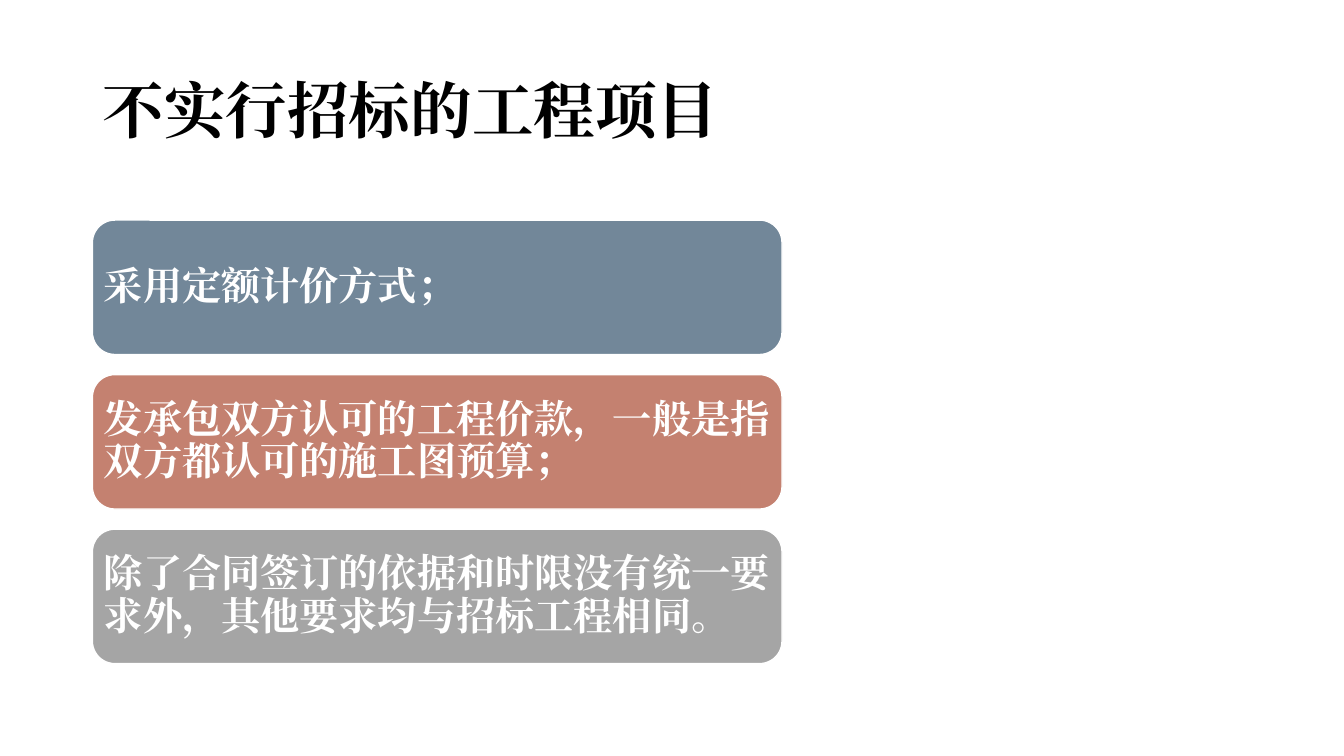
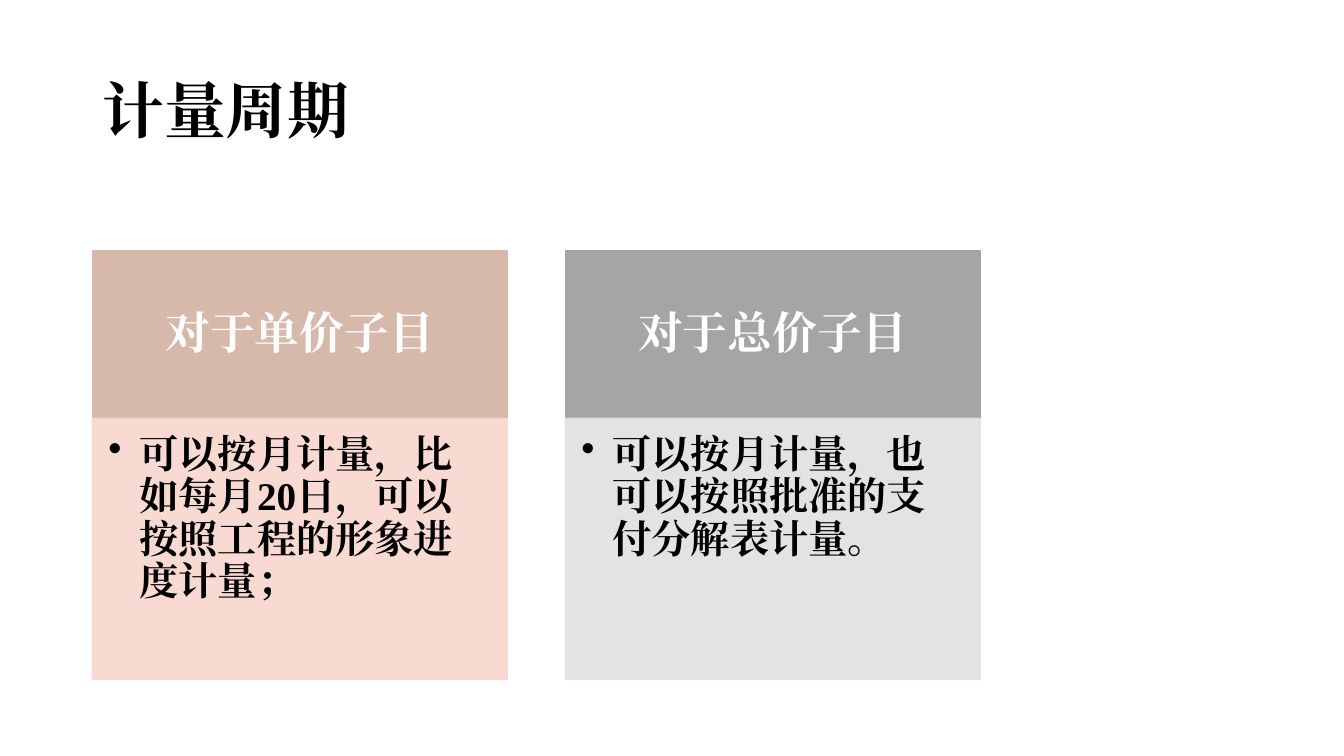
from lxml import etree
from pptx import Presentation
from pptx.dml.color import RGBColor
from pptx.enum.shapes import MSO_SHAPE as SHAPE
from pptx.enum.text import MSO_ANCHOR as ANCHOR, MSO_AUTO_SIZE as AUTO, PP_ALIGN as ALIGN
from pptx.oxml.ns import qn
from pptx.util import Inches, Pt

COLS, ROWS = 160, 90
LEFT = 11
FONT = "Times New Roman"
BLACK, WHITE, GREY = "000000", "FFFFFF", "A5A5A5"


def color(hex_string):
    return RGBColor.from_string(hex_string)


def set_attrs(obj, values):
    for name, value in values.items():
        setattr(obj, name, value)


class Deck:
    """Holds the style and the current slide; lengths are grid columns and rows."""

    def __init__(self):
        self.prs = Presentation()
        set_attrs(self.prs, {"slide_width": Inches(13.333), "slide_height": Inches(7.5)})
        self.slide = None

    def place(self, x, y, w, h):
        col, row = self.prs.slide_width / COLS, self.prs.slide_height / ROWS
        return {"left": round(x * col), "top": round(y * row),
                "width": round(w * col), "height": round(h * row)}

    def add_text(self, tf, text, size, ink, align=ALIGN.LEFT, anchor=ANCHOR.MIDDLE, insets=None):
        set_attrs(tf, {"word_wrap": True, "auto_size": AUTO.NONE, "vertical_anchor": anchor})
        if insets:
            sides = ("margin_left", "margin_top", "margin_right", "margin_bottom")
            set_attrs(tf, {side: Inches(v) for side, v in zip(sides, insets)})
        p = tf.paragraphs[0]
        set_attrs(p, {"alignment": align, "line_spacing": 0.9})
        r = p.add_run()
        r.text = text
        set_attrs(r.font, {"name": FONT, "size": Pt(size), "bold": True})
        r.font.color.rgb = color(ink)
        rPr = r._r.get_or_add_rPr()
        rPr.set("lang", "zh-CN")
        latin = rPr.find(qn("a:latin"))
        ea = etree.Element(qn("a:ea"), typeface=FONT)
        latin.addnext(ea)
        return p

    def add_slide(self, title):
        self.slide = self.prs.slides.add_slide(self.prs.slide_layouts[5])
        sp = self.slide.shapes.title
        set_attrs(sp, self.place(LEFT, 4.8, 138, 17.4))
        self.add_text(sp.text_frame, title, 44, BLACK)

    def box(self, kind, area, fill, line, alpha=None):
        sp = self.slide.shapes.add_shape(kind, *self.place(*area).values())
        sp.shadow.inherit = False
        sp.fill.solid()
        sp.fill.fore_color.rgb = color(fill)
        sp.line.color.rgb = color(line)
        sp.line.width = Pt(1)
        if alpha:
            for clr in sp._element.spPr.iter(qn("a:srgbClr")):
                etree.SubElement(clr, qn("a:alpha"), val=str(alpha * 1000))
        return sp

    def bars(self, items):
        """Stack rounded bars, one for each (text, fill)."""
        for i, (text, fill) in enumerate(items):
            area = (LEFT, 26.2 + i * 18.4, 82.1, 16)
            sp = self.box(SHAPE.ROUNDED_RECTANGLE, area, fill, WHITE)
            self.add_text(sp.text_frame, text, 28, WHITE, insets=(0.05,) * 4)

    def panels(self, items):
        """Set headed panels side by side, one for each (head, text, head fill, body fill)."""
        top, split, width, pitch = 29.9, 49.8, 49.4, 56.3
        for i, (head, text, head_fill, body_fill) in enumerate(items):
            x = LEFT + i * pitch
            sp = self.box(SHAPE.RECTANGLE, (x, top, width, split - top), head_fill, head_fill)
            self.add_text(sp.text_frame, head, 32, WHITE, ALIGN.CENTER,
                          insets=(0.25, 0.14, 0.25, 0.14))
            sp = self.box(SHAPE.RECTANGLE, (x, split, width, 31.1), body_fill, body_fill, 90)
            p = self.add_text(sp.text_frame, text, 28, BLACK, anchor=ANCHOR.TOP,
                              insets=(0.16, 0.16, 0.22, 0.24))
            self.bullet(p, 0.31)

    def bullet(self, p, indent):
        pPr = p._p.get_or_add_pPr()
        pPr.set("marL", str(Inches(indent)))
        pPr.set("indent", str(-Inches(indent)))
        etree.SubElement(pPr, qn("a:buChar"), char="•")


def main():
    deck = Deck()

    deck.add_slide("不实行招标的工程项目")
    deck.bars([
        ("采用定额计价方式；", "728799"),
        ("发承包双方认可的工程价款，一般是指双方都认可的施工图预算；", "C48170"),
        ("除了合同签订的依据和时限没有统一要求外，其他要求均与招标工程相同。", GREY),
    ])

    deck.add_slide("计量周期")
    deck.panels([
        ("对于单价子目", "可以按月计量，比如每月20日，可以按照工程的形象进度计量；",
         "D7B9AB", "F8D7CE"),
        ("对于总价子目", "可以按月计量，也可以按照批准的支付分解表计量。",
         GREY, "E1E1E1"),
    ])

    deck.prs.save("out.pptx")


if __name__ == "__main__":
    main()
